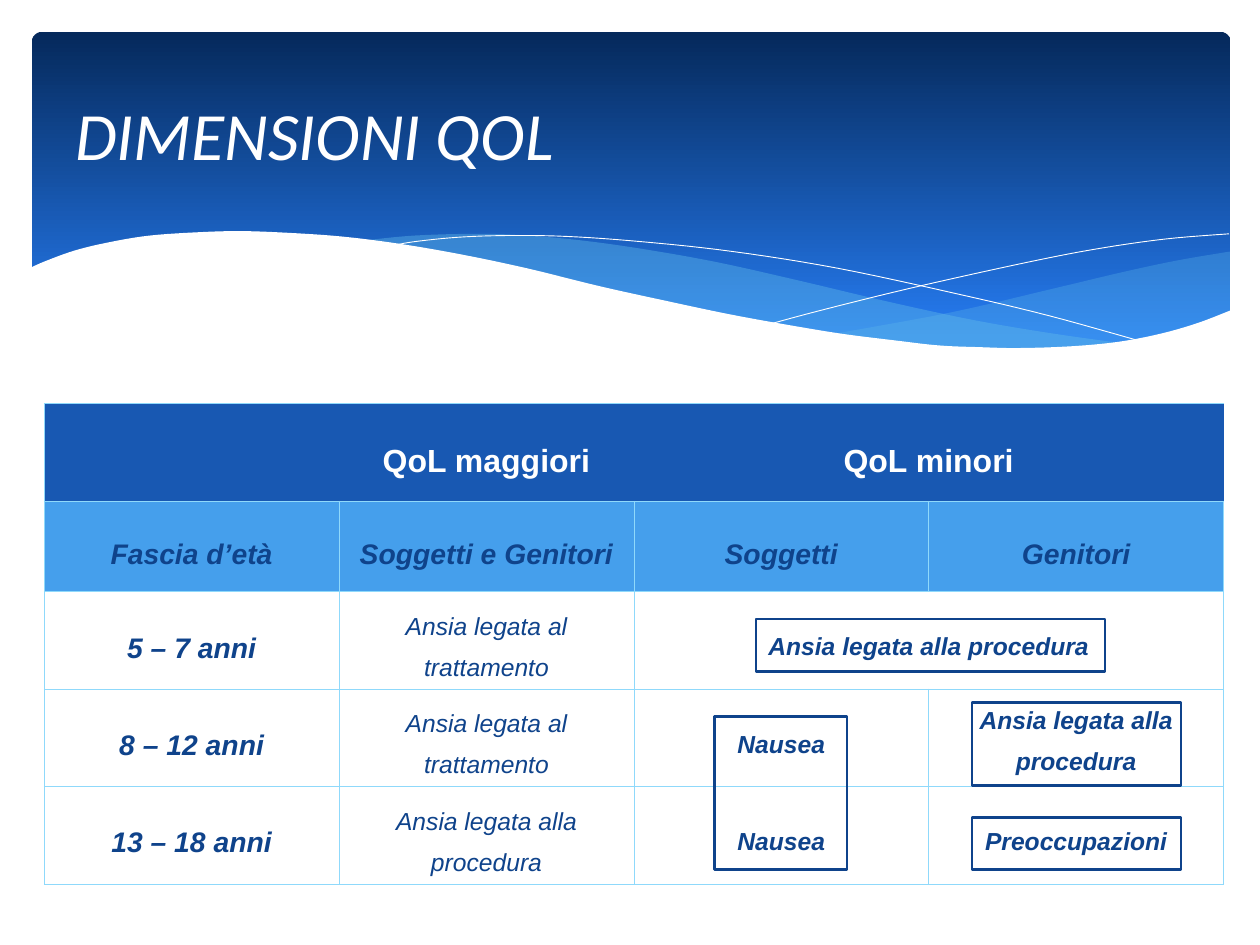
from lxml import etree
from pptx import Presentation
from pptx import util as u
from pptx.dml.color import RGBColor
from pptx.enum import shapes, text
from pptx.oxml.ns import qn

PX = 9144
COLORS = {
    "white": "FFFFFF", "night": "05295B", "sky": "267CF2", "wave": "62BCE9",
    "header": "1858B2", "subheader": "459FEC", "ink": "0F438B", "border": "8FD9FB",
}
RGB = {name: RGBColor.from_string(value) for name, value in COLORS.items()}


def smooth(points, steps=6):
    padded = [points[0], *points, points[-1]]
    curve = [points[0]]
    for a, b, c, d in zip(padded, padded[1:], padded[2:], padded[3:]):
        for step in range(1, steps + 1):
            t = step / steps
            curve.append(tuple(
                (2 * q + (r - p) * t + (2 * p - 5 * q + 4 * r - s) * t ** 2
                 + (3 * q - p - 3 * r + s) * t ** 3) / 2
                for p, q, r, s in zip(a, b, c, d)))
    return curve


def write(frame, content, alignment, spacing, anchor, font):
    frame.vertical_anchor = anchor
    paragraph = frame.paragraphs[0]
    paragraph.alignment = alignment
    paragraph.line_spacing = spacing
    run = paragraph.add_run()
    run.text = content
    run.font.color.rgb = RGB[font["color"]]
    for key in ("name", "size", "bold", "italic"):
        setattr(run.font, key, font[key])


presentation = Presentation()
presentation.slide_width = 1422 * PX
presentation.slide_height = 1067 * PX
slide = presentation.slides.add_slide(presentation.slide_layouts[6])

banner = slide.shapes.add_shape(
    shapes.MSO_SHAPE.ROUNDED_RECTANGLE, 36 * PX, 36 * PX, 1353 * PX, 384 * PX)
banner.adjustments[0] = 0.03
banner.shadow.inherit = False
banner.line.fill.background()
banner.fill.gradient()
banner.fill.gradient_angle = 270
for stop, color, position in zip(banner.fill.gradient_stops, ("night", "sky"), (0, 0.9)):
    stop.color.rgb = RGB[color]
    stop.position = position

waves = [
    ([[(1388, 284), (1329, 294), (1268, 307), (1184, 327), (1072, 353), (941, 377)],
      [(941, 377), (1022, 388), (1094, 393), (1158, 395), (1227, 391), (1288, 382),
       (1340, 369), (1388, 351)]], "wave", 29),
    ([[(1270, 388), (1191, 377), (1102, 362), (1004, 341), (894, 315), (809, 296),
       (731, 282), (661, 272), (597, 266), (540, 264), (467, 266), (407, 272)],
      [(407, 272), (487, 283), (575, 300), (698, 329), (806, 353), (902, 371),
       (988, 384), (1064, 392), (1132, 396), (1192, 395), (1270, 388)]], "wave", 40),
    ([[(440, 278), (467, 273), (516, 268), (571, 266), (640, 267), (725, 273),
       (827, 284), (946, 303), (1081, 332), (1182, 356), (1290, 386)]], None, None),
    ([[(872, 365), (928, 350), (1025, 326), (1146, 299), (1232, 282), (1314, 270),
       (1387, 264)]], None, None),
    ([[(33, 303), (51, 295), (84, 283), (121, 274), (169, 266), (229, 262), (275, 261),
       (327, 263), (385, 267), (449, 275), (519, 287), (595, 303), (676, 323),
       (753, 340), (824, 355), (890, 367), (951, 377), (1007, 384), (1059, 390),
       (1106, 392), (1150, 393), (1209, 391), (1262, 386), (1309, 377), (1351, 365),
       (1390, 350)],
      [(1390, 468), (33, 468)]], "white", 100),
]
for edges, color, opacity in waves:
    points = [(x * PX, y * PX) for edge in edges
              for x, y in (smooth(edge) if len(edge) > 2 else edge)]
    builder = slide.shapes.build_freeform(*points[0])
    builder.add_line_segments(points[1:], close=color is not None)
    wave = builder.convert_to_shape()
    wave.shadow.inherit = False
    if color is None:
        wave.fill.background()
        wave.line.color.rgb = RGB["white"]
        wave.line.width = u.Pt(0)
        continue
    wave.line.fill.background()
    wave.fill.solid()
    wave.fill.fore_color.rgb = RGB[color]
    if opacity < 100:
        tint = next(wave.fill._xPr.iter(qn("a:srgbClr")))
        etree.SubElement(tint, qn("a:alpha"), val=str(opacity * 1000))

title = slide.shapes.add_textbox(71 * PX, 53 * PX, 1280 * PX, 195 * PX).text_frame
margins = {"margin_left": 14, "margin_right": 14, "margin_top": 7, "margin_bottom": 7}
for side, length in margins.items():
    setattr(title, side, length * PX)
title.word_wrap = True
write(title, "DIMENSIONI QOL", text.PP_ALIGN.LEFT, 1.0, text.MSO_ANCHOR.MIDDLE,
      {"name": "Calibri", "size": u.Pt(55), "bold": False, "italic": True, "color": "white"})

rows = [
    ["", "QoL maggiori", "QoL minori", ""],
    ["Fascia d’età", "Soggetti e Genitori", "Soggetti", "Genitori"],
    ["5 – 7 anni", "Ansia legata al trattamento", "Ansia legata alla procedura", ""],
    ["8 – 12 anni", "Ansia legata al trattamento", "Nausea", "Ansia legata alla procedura"],
    ["13 – 18 anni", "Ansia legata alla procedura", "Nausea", "Preoccupazioni"],
]
row_heights = [110, 102, 110, 110, 110]
table = slide.shapes.add_table(5, 4, 50 * PX, 456 * PX, 1331 * PX, 542 * PX).table
table.first_row = False
table.horz_banding = False
for column in table.columns:
    column.width = 1331 * PX // 4
for row, height in zip(table.rows, row_heights):
    row.height = height * PX
for r in (0, 2):
    table.cell(r, 2).merge(table.cell(r, 3))

for r, labels in enumerate(rows):
    for c, label in enumerate(labels):
        cell = table.cell(r, c)
        if r < 2:
            cell.fill.solid()
            cell.fill.fore_color.rgb = RGB["header" if r == 0 else "subheader"]
        else:
            cell.fill.background()
        visible = {"lnL": r > 0 or c == 0, "lnR": r > 0 or c == 3, "lnT": True, "lnB": True}
        for index, (tag, shown) in enumerate(visible.items()):
            border = etree.Element(qn("a:" + tag), w=str(u.Pt(0.75)))
            paint = etree.SubElement(border, qn("a:solidFill" if shown else "a:noFill"))
            if shown:
                etree.SubElement(paint, qn("a:srgbClr"), val=COLORS["border"])
            cell._tc.get_or_add_tcPr().insert(index, border)
        if not label:
            continue
        size = 26 if r == 0 else 23 if r == 1 or c == 0 else 20
        anchor = text.MSO_ANCHOR.TOP if (r, c) == (3, 3) else text.MSO_ANCHOR.MIDDLE
        cell.vertical_anchor = anchor
        write(cell.text_frame, label, text.PP_ALIGN.CENTER, 1.5, anchor,
              {"name": "Arial", "size": u.Pt(size), "bold": r < 2 or c != 1,
               "italic": r > 0, "color": "ink" if r else "white"})

highlights = [
    (853, 699, 394, 59, 2), (1097, 923, 236, 59, 2),
    (806, 809, 150, 173, 2.25), (1097, 793, 236, 94, 2.25),
]
for *box, weight in highlights:
    frame = slide.shapes.add_shape(
        shapes.MSO_SHAPE.RECTANGLE, *(length * PX for length in box))
    frame.shadow.inherit = False
    frame.fill.background()
    frame.line.color.rgb = RGB["ink"]
    frame.line.width = u.Pt(weight)

presentation.save("out.pptx")
